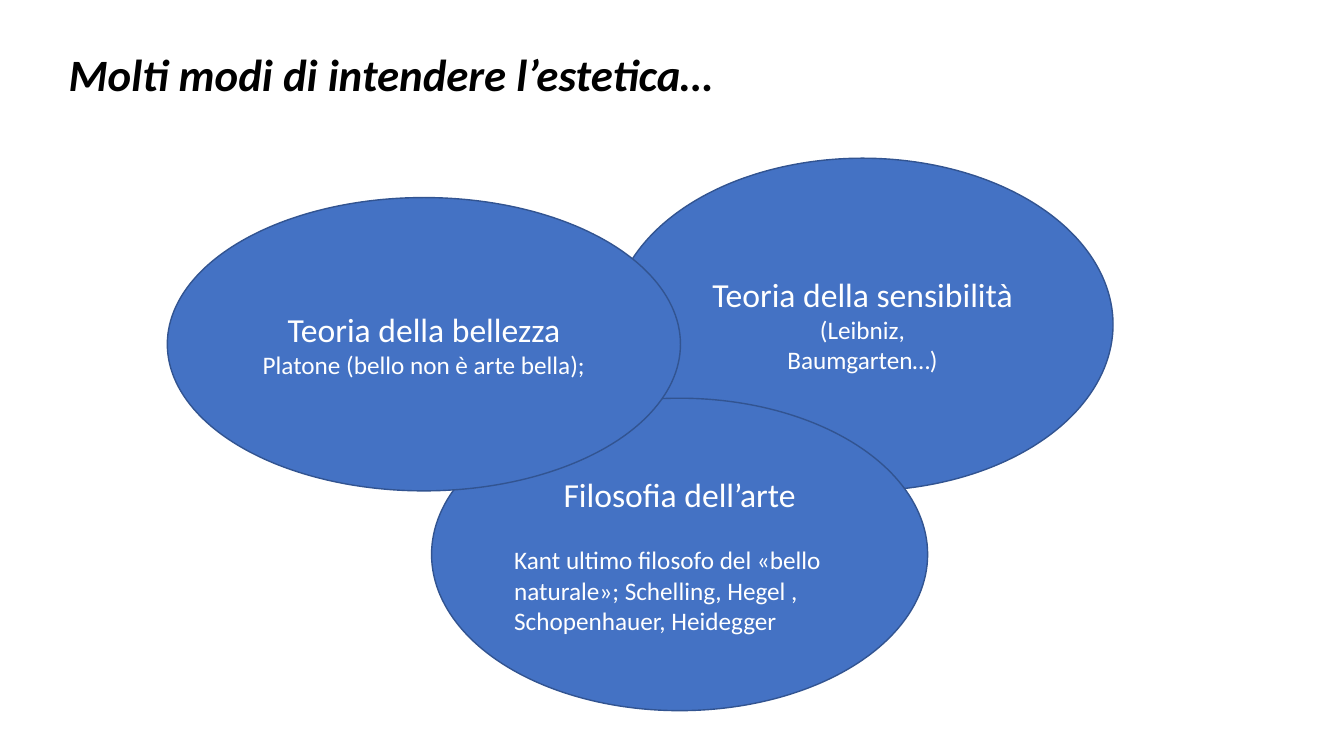
from dataclasses import dataclass

from pptx import Presentation
from pptx.dml.color import RGBColor
from pptx.enum.shapes import MSO_SHAPE as Shape
from pptx.enum.text import MSO_ANCHOR as Anchor, MSO_AUTO_SIZE as AutoSize, PP_ALIGN as Align
from pptx.util import Inches, Pt

BLUE = RGBColor(0x44, 0x72, 0xC4)
DARK_BLUE = RGBColor(0x32, 0x54, 0x91)
WHITE = RGBColor(0xFF, 0xFF, 0xFF)
BLACK = RGBColor(0x00, 0x00, 0x00)

HEADING = {"name": "Calibri", "size": Pt(24)}
BODY = {"name": "Calibri", "size": Pt(18)}
TITLE = {"name": "Calibri", "size": Pt(32), "bold": True, "italic": True}


@dataclass(frozen=True)
class Box:
    """Left, top, width and height in percent of the slide."""
    x: float
    y: float
    w: float
    h: float


@dataclass(frozen=True)
class Theory:
    box: Box
    heading: str
    lines: tuple[str, ...]
    align: Align = Align.CENTER
    gap: float = 0  # points between heading and body


# Back to front
THEORIES = (
    Theory(Box(45.54, 20.93, 37.28, 44), "Teoria della sensibilità",
           ("(Leibniz,", "Baumgarten…)")),
    Theory(Box(32.11, 52.67, 36.91, 41.33), "Filosofia dell’arte",
           ("Kant ultimo filosofo del «bello naturale»; "
            "Schelling, Hegel , Schopenhauer, Heidegger",), Align.LEFT, 22),
    Theory(Box(12.45, 26.13, 38.18, 38.8), "Teoria della bellezza",
           ("Platone (bello non è arte bella);",)),
)

prs = Presentation()
prs.slide_width, prs.slide_height = Inches(13.33), Inches(7.5)


def place(box: Box) -> tuple[int, int, int, int]:
    w, h = prs.slide_width / 100, prs.slide_height / 100
    return int(box.x * w), int(box.y * h), int(box.w * w), int(box.h * h)


def write(p, text: str, fmt: dict, color: RGBColor, align: Align) -> None:
    p.alignment = align
    r = p.add_run()
    r.text = text
    for name, value in fmt.items():
        setattr(r.font, name, value)
    r.font.color.rgb = color


def add_title(slide, text: str, box: Box) -> None:
    sp = slide.shapes.title
    sp.left, sp.top, sp.width, sp.height = place(box)
    tf = sp.text_frame
    tf.auto_size = AutoSize.NONE
    tf.vertical_anchor = Anchor.MIDDLE
    write(tf.paragraphs[0], text, TITLE, BLACK, Align.LEFT)


def add_theory(slide, theory: Theory) -> None:
    sp = slide.shapes.add_shape(Shape.OVAL, *place(theory.box))
    sp.shadow.inherit = False
    sp.fill.solid()
    sp.fill.fore_color.rgb = BLUE
    sp.line.color.rgb = DARK_BLUE
    sp.line.width = Pt(1)
    tf = sp.text_frame
    tf.word_wrap = True
    tf.vertical_anchor = Anchor.MIDDLE
    write(tf.paragraphs[0], theory.heading, HEADING, WHITE, Align.CENTER)
    tf.paragraphs[0].space_after = Pt(theory.gap)
    for line in theory.lines:
        write(tf.add_paragraph(), line, BODY, WHITE, theory.align)


def main() -> None:
    s = prs.slides.add_slide(prs.slide_layouts[5])
    add_title(s, "Molti modi di intendere l’estetica…", Box(4.35, 5.47, 64.74, 8.53))
    for theory in THEORIES:
        add_theory(s, theory)
    prs.save("out.pptx")


if __name__ == "__main__":
    main()
